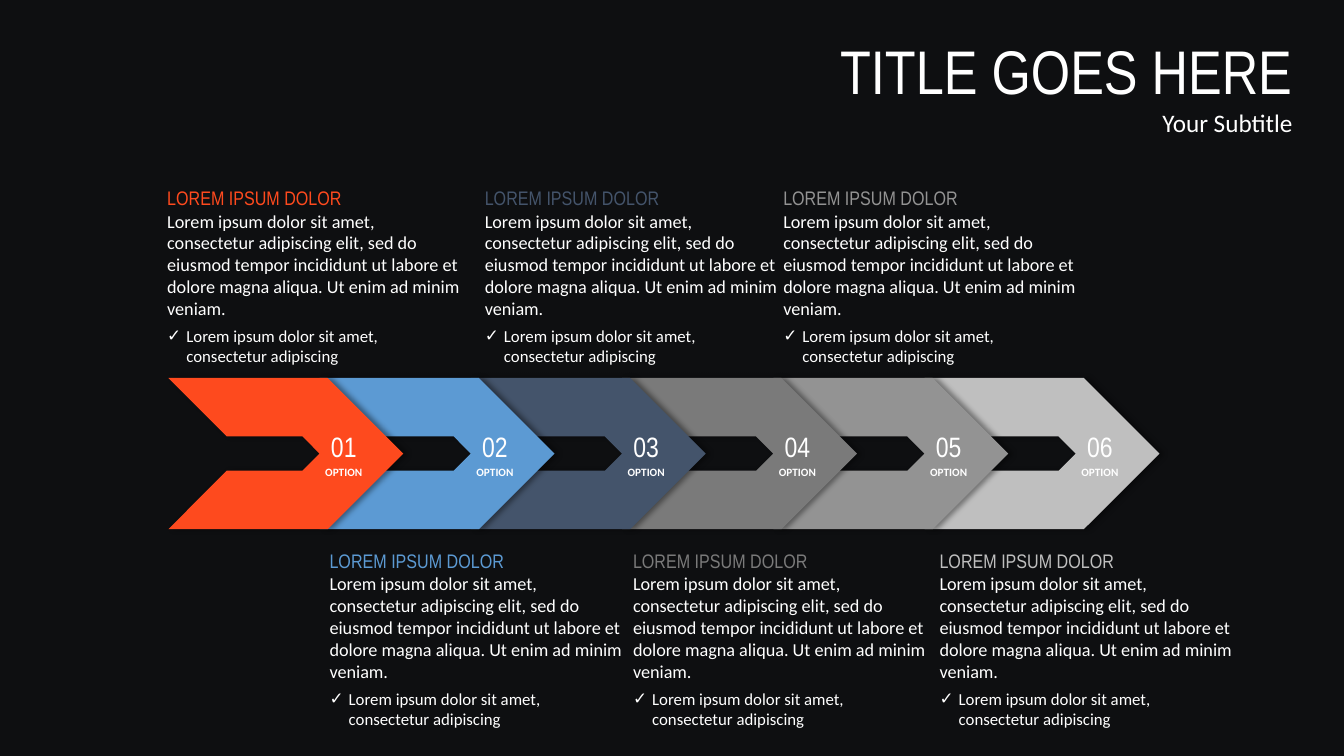
"""Build a dark slide of six chained chevron options with captions."""
from lxml import etree
from pptx import Presentation
from pptx.dml.color import RGBColor
from pptx.enum import text as txt
from pptx.oxml import ns
from pptx.util import Inches, Pt

HUES = {
    "back": "0E0F11", "white": "FFFFFF", "01": "FE4A1E", "02": "5C9AD3",
    "03": "44546B", "04": "7A7A7A", "05": "939393", "06": "BFBFBF",
}
LEFTS = {"01": 1.56, "02": 3.17, "03": 4.71, "04": 6.18, "05": 7.67, "06": 9.22}
EDGE = [(0, 0), (1.58, 0), (2.33, 0.75), (1.58, 1.5), (0, 1.5),
        (0.58, 0.92), (1.33, 0.92), (1.5, 0.75), (1.33, 0.58), (0.58, 0.58)]
LOREM = ("Lorem ipsum dolor sit amet, consectetur adipiscing elit, sed do eiusmod "
         "tempor incididunt ut labore et dolore magna aliqua. Ut enim ad minim veniam.")
POINT = "Lorem ipsum dolor sit amet, consectetur adipiscing"
NARROW = "Arial Narrow"


def write(frame, words, size, font="Calibri", hue="white", bold=False,
          align=txt.PP_ALIGN.LEFT, gap=0, mark=None):
    """Add one formatted paragraph, filling the empty first one if there is one."""
    para = frame.paragraphs[0] if not frame.text else frame.add_paragraph()
    para.alignment = align
    para.space_before = Pt(gap)
    if mark:
        props = para._p.get_or_add_pPr()
        props.set("marL", str(Inches(0.19)))
        props.set("indent", str(-Inches(0.19)))
        etree.SubElement(props, ns.qn("a:buFont"), typeface="Arial")
        etree.SubElement(props, ns.qn("a:buChar"), char=mark)
    run = para.add_run()
    run.text = words
    run.font.size = Pt(size)
    run.font.name = font
    run.font.bold = bold
    run.font.color.rgb = RGBColor.from_string(HUES[hue])


deck = Presentation()
deck.slide_width, deck.slide_height = Inches(13.33), Inches(7.5)
slide = deck.slides.add_slide(deck.slide_layouts[5])
slide.background.fill.solid()
slide.background.fill.fore_color.rgb = RGBColor.from_string(HUES["back"])

title = slide.shapes.title
title.left, title.top = Inches(6.9), Inches(0.28)
title.width, title.height = Inches(6.02), Inches(1.14)
head = title.text_frame
head.vertical_anchor = txt.MSO_ANCHOR.TOP
head.auto_size = txt.MSO_AUTO_SIZE.NONE
write(head, "TITLE GOES HERE", 44, font=NARROW, align=txt.PP_ALIGN.RIGHT)
write(head, "Your Subtitle", 18, align=txt.PP_ALIGN.RIGHT)

for step, (num, left) in enumerate(LEFTS.items()):
    top = 5.4 if step % 2 else 1.8
    note = slide.shapes.add_textbox(Inches(left), Inches(top), Inches(3.11), Inches(1.9))
    body = note.text_frame
    body.word_wrap = True
    write(body, "LOREM IPSUM DOLOR", 14, font=NARROW, hue=num)
    write(body, LOREM, 13)
    write(body, POINT, 12, gap=4.8, mark="✓")

for step, num in reversed(list(enumerate(LEFTS))):
    left = 1.67 + 1.5 * step
    group = slide.shapes.add_group_shape()
    dots = [(Inches(left + x), Inches(3.75 + y)) for x, y in EDGE]
    pen = group.shapes.build_freeform(*dots[0])
    pen.add_line_segments(dots[1:], close=True)
    arrow = pen.convert_to_shape()
    arrow.fill.solid()
    arrow.fill.fore_color.rgb = RGBColor.from_string(HUES[num])
    arrow.line.fill.background()
    arrow.shadow.inherit = False
    glow = arrow._element.spPr.find(ns.qn("a:effectLst"))
    cast = etree.SubElement(glow, ns.qn("a:outerShdw"), blurRad=str(Pt(4)),
                            dist=str(Pt(3)), dir="0", algn="l", rotWithShape="0")
    tint = etree.SubElement(cast, ns.qn("a:srgbClr"), val="000000")
    etree.SubElement(tint, ns.qn("a:alpha"), val="40000")

    label = group.shapes.add_textbox(Inches(left + 1.44), Inches(4.21),
                                     Inches(0.6), Inches(0.6))
    tag = label.text_frame
    tag.word_wrap = False
    tag.vertical_anchor = txt.MSO_ANCHOR.MIDDLE
    write(tag, num, 20, font=NARROW, align=txt.PP_ALIGN.CENTER)
    write(tag, "OPTION", 8, bold=True, align=txt.PP_ALIGN.CENTER, gap=1.6)

deck.save("out.pptx")
